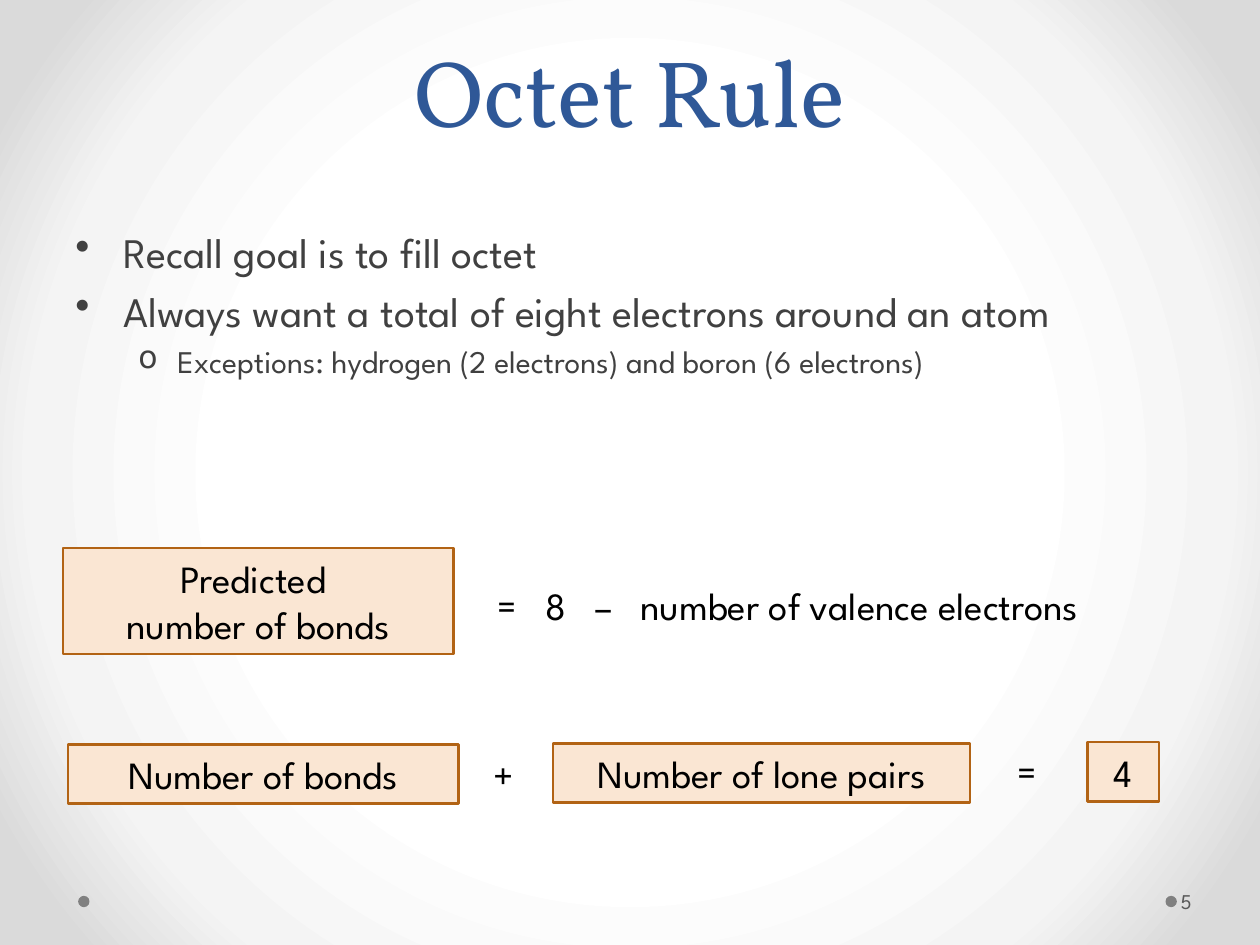
from lxml import etree
from pptx import Presentation
from pptx.dml.color import RGBColor
from pptx.enum.shapes import MSO_SHAPE
from pptx.enum.text import MSO_ANCHOR, MSO_AUTO_SIZE, PP_ALIGN
from pptx.oxml.ns import qn
from pptx.util import Inches, Pt

RECT, OVAL = MSO_SHAPE.RECTANGLE, MSO_SHAPE.OVAL
LEFT, MID = PP_ALIGN.LEFT, PP_ALIGN.CENTER
TOP, CENTER, BOTTOM = MSO_ANCHOR.TOP, MSO_ANCHOR.MIDDLE, MSO_ANCHOR.BOTTOM
GROW, FIXED = MSO_AUTO_SIZE.SHAPE_TO_FIT_TEXT, MSO_AUTO_SIZE.NONE
HEAD, BODY = "Vollkorn", "League Spartan"
COLORS = {
    "title": "2F5897", "body": "404040", "ink": "000000", "page": "595959",
    "dot": "808080", "box": "FAE6D3", "edge": "B26314",
}
GLOW = [(50, "FFFFFF"), (76, "F4F4F4"), (92, "DADADA")]
COLS, ROWS = 20, 15


def tint(name):
    """Return the named colour."""
    return RGBColor.from_string(COLORS[name])


def write(frame, text, size=22, font=BODY, color="ink", align=LEFT,
          more=False, before=None, pitch=None):
    """Write one paragraph into a frame and return it."""
    para = frame.add_paragraph() if more else frame.paragraphs[0]
    para.alignment = align
    if before is not None:
        para.space_before = Pt(before)
    if pitch:
        para.line_spacing = Pt(pitch)
    run = para.add_run()
    run.text = text
    run.font.size, run.font.name = Pt(size), font
    run.font.color.rgb = tint(color)
    return para


class Deck:
    """Holds the grid and the current slide."""

    def __init__(self):
        """Start a slide on the title-only layout."""
        self.file = Presentation()
        self.file.slide_width, self.file.slide_height = Inches(10), Inches(7.5)
        self.slide = self.file.slides.add_slide(self.file.slide_layouts[5])

    def place(self, x, y, w, h):
        """Turn grid columns and rows into lengths."""
        col, row = self.file.slide_width / COLS, self.file.slide_height / ROWS
        return [round(n) for n in (x * col, y * row, w * col, h * row)]

    def glow(self, stops):
        """Fill the background with a circular gradient."""
        self.slide.background.fill.gradient()
        grad = self.slide.element.xpath(".//p:bg//a:gradFill")[0]
        for child in list(grad):
            grad.remove(child)
        items = etree.SubElement(grad, qn("a:gsLst"))
        for pos, color in stops:
            stop = etree.SubElement(items, qn("a:gs"), pos=str(pos * 1000))
            etree.SubElement(stop, qn("a:srgbClr"), val=color)
        shape = etree.SubElement(grad, qn("a:path"), path="circle")
        etree.SubElement(shape, qn("a:fillToRect"),
                         {side: "50000" for side in "ltrb"})

    def title(self, text, *at):
        """Place and format the title."""
        head = self.slide.shapes.title
        head.left, head.top, head.width, head.height = self.place(*at)
        frame = head.text_frame
        frame.vertical_anchor, frame.auto_size = BOTTOM, FIXED
        write(frame, text, size=54, font=HEAD, color="title", align=MID, pitch=58)

    def shape(self, kind, at, fill, edge=None):
        """Add a flat filled shape."""
        item = self.slide.shapes.add_shape(kind, *self.place(*at))
        item.shadow.inherit = False
        item.fill.solid()
        item.fill.fore_color.rgb = tint(fill)
        if edge:
            item.line.color.rgb, item.line.width = tint(edge), Pt(1.5)
        else:
            item.line.fill.background()
        return item

    def box(self, lines, *at):
        """Add a framed box with centred lines."""
        frame = self.shape(RECT, at, "box", "edge").text_frame
        frame.word_wrap, frame.auto_size = True, GROW
        for i, line in enumerate(lines):
            write(frame, line, align=MID, more=i > 0)

    def frame(self, at, wrap=True, grow=FIXED, anchor=TOP):
        """Add an empty text box and return its frame."""
        frame = self.slide.shapes.add_textbox(*self.place(*at)).text_frame
        frame.word_wrap, frame.auto_size = wrap, grow
        frame.vertical_anchor = anchor
        return frame

    def label(self, text, *at, wrap=False):
        """Add a part of an equation."""
        write(self.frame(at, wrap, GROW), text)

    def bullets(self, items, *at):
        """Add a list of (level, text) items."""
        looks = [("•", 24, 0.38, 0.38), ("o", 18, 0.81, 0.31)]
        frame = self.frame(at)
        for i, (level, text) in enumerate(items):
            mark, size, left, hang = looks[level]
            para = write(frame, text, size=size, color="body",
                         more=i > 0, before=size / 5)
            para.level = level
            props = para._p.get_or_add_pPr()
            props.set("marL", str(Inches(left)))
            props.set("indent", str(-Inches(hang)))
            etree.SubElement(props, qn("a:buChar"), char=mark)

    def page(self, text, *at):
        """Add the page number."""
        frame = self.frame(at, anchor=CENTER)
        frame.margin_left, frame.margin_right = Inches(0.03), Inches(0.05)
        write(frame, text, size=12, color="page")


def main():
    """Build and save the slide."""
    deck = Deck()
    deck.glow(GLOW)
    for x in (18.5, 1.24):
        deck.shape(OVAL, (x, 14.22, 0.18, 0.18), "dot")
    deck.title("Octet Rule", 1, 0, 18, 2.42)
    deck.bullets([
        (0, "Recall goal is to fill octet"),
        (0, "Always want a total of eight electrons around an atom"),
        (1, "Exceptions: hydrogen (2 electrons) and boron (6 electrons)"),
    ], 1, 3.5, 18, 9.9)
    deck.box(["Predicted ", "number of bonds"], 1, 8.7, 6.2, 1.68)
    deck.label("=   8   –   number of valence electrons",
               7.7, 9.14, 11.62, 0.94, wrap=True)
    deck.box(["Number of bonds"], 1.08, 11.82, 6.2, 0.94)
    deck.label("+", 7.64, 11.82, 0.78, 0.94)
    deck.box(["Number of lone pairs"], 8.78, 11.8, 6.62, 0.94)
    deck.label("=", 15.96, 11.78, 0.78, 0.94)
    deck.box(["4"], 17.26, 11.78, 1.14, 0.94)
    deck.page("5", 18.68, 13.9, 1.22, 0.8)
    deck.file.save("out.pptx")


if __name__ == "__main__":
    main()
